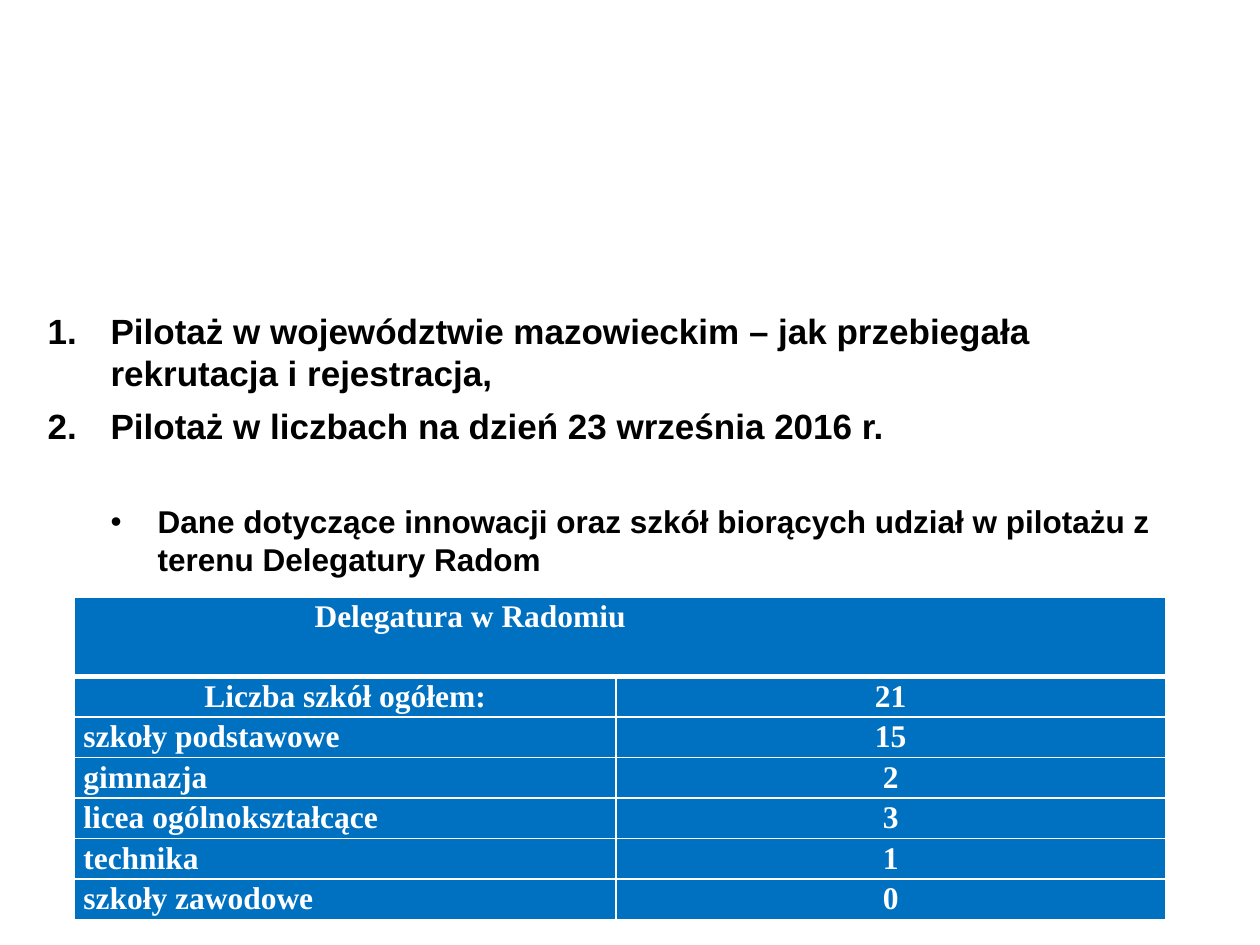
from lxml.etree import SubElement
from pptx import Presentation
from pptx.dml.color import RGBColor
from pptx.enum.text import PP_ALIGN
from pptx.oxml.ns import qn
from pptx.util import Cm, Pt

# Content
TOPICS = [
    "Pilotaż w województwie mazowieckim – jak przebiegała rekrutacja i rejestracja,",
    "Pilotaż w liczbach na dzień 23 września 2016 r.",
]
DETAIL = "Dane dotyczące innowacji oraz szkół biorących udział w pilotażu z terenu Delegatury Radom"
TABLE_TITLE = "Delegatura w Radomiu"
SCHOOLS = [
    ("Liczba szkół ogółem:", "21"),
    ("szkoły podstawowe", "15"),
    ("gimnazja", "2"),
    ("licea ogólnokształcące", "3"),
    ("technika", "1"),
    ("szkoły zawodowe", "0"),
]
BLACK, WHITE, BLUE = "000000", "FFFFFF", "0070C0"
COLUMN_WIDTHS = (Cm(10.92), Cm(11.07))
TITLE_HEIGHT, ROW_HEIGHT = Cm(1.6), Cm(0.81)


def color(value):
    return RGBColor.from_string(value)


def add_text(paragraph, text, font_name, size, text_color):
    run = paragraph.add_run()
    run.text = text
    run.font.name = font_name
    run.font.size = Pt(size)
    run.font.bold = True
    run.font.color.rgb = color(text_color)


def set_bullet(paragraph, left, hanging, tag, **attributes):
    properties = paragraph._p.get_or_add_pPr()
    properties.set("marL", str(left))
    properties.set("indent", str(-hanging))
    SubElement(properties, qn("a:buFont"), typeface="Arial")
    SubElement(properties, qn(tag), **attributes)


def set_borders(cell, bottom_width):
    properties = cell._tc.get_or_add_tcPr()
    widths = {"a:lnL": 1, "a:lnR": 1, "a:lnT": 1, "a:lnB": bottom_width}
    for position, (tag, width) in enumerate(widths.items()):
        line = properties.makeelement(qn(tag), {"w": str(Pt(width))})
        properties.insert(position, line)
        fill = SubElement(line, qn("a:solidFill"))
        SubElement(fill, qn("a:srgbClr"), val=WHITE)


def fill_cell(cell, text, alignment, bottom_width=1):
    cell.margin_left = cell.margin_right = Cm(0.18)
    cell.margin_top = cell.margin_bottom = 0
    cell.fill.solid()
    cell.fill.fore_color.rgb = color(BLUE)
    set_borders(cell, bottom_width)
    paragraph = cell.text_frame.paragraphs[0]
    paragraph.alignment = alignment
    paragraph.line_spacing = 1.07
    add_text(paragraph, text, "Times New Roman", 18, WHITE)
    return paragraph


presentation = Presentation()
presentation.slide_width, presentation.slide_height = Cm(25.4), Cm(19.05)
slide = presentation.slides.add_slide(presentation.slide_layouts[6])

# Numbered topics and the bullet under them
text_frame = slide.shapes.add_textbox(Cm(0.71), Cm(6.12), Cm(23.19), Cm(9.07)).text_frame
text_frame.word_wrap = True
for index, topic in enumerate(TOPICS):
    paragraph = text_frame.add_paragraph() if index else text_frame.paragraphs[0]
    paragraph.space_after = Pt(6)
    set_bullet(paragraph, Cm(1.27), Cm(1.27), "a:buAutoNum", type="arabicPeriod")
    add_text(paragraph, topic, "Arial", 20, BLACK)
paragraph = text_frame.add_paragraph()
paragraph.level = 1
paragraph.space_before = Pt(26)
set_bullet(paragraph, Cm(2.22), Cm(0.95), "a:buChar", char="•")
add_text(paragraph, DETAIL, "Arial", 18, BLACK)

# Table of schools
table = slide.shapes.add_table(
    len(SCHOOLS) + 1, 2, Cm(1.5), Cm(12.04), sum(COLUMN_WIDTHS),
    TITLE_HEIGHT + ROW_HEIGHT * len(SCHOOLS)).table
for column, width in zip(table.columns, COLUMN_WIDTHS):
    column.width = width
for index, row in enumerate(table.rows):
    row.height = ROW_HEIGHT if index else TITLE_HEIGHT

# Title row, centred on a tab stop
table.cell(0, 0).merge(table.cell(0, 1))
title = fill_cell(table.cell(0, 0), "\t" + TABLE_TITLE, PP_ALIGN.LEFT, 3)
tab_list = SubElement(title._p.get_or_add_pPr(), qn("a:tabLst"))
SubElement(tab_list, qn("a:tab"), pos=str(Cm(7.8)), algn="ctr")

for index, (label, count) in enumerate(SCHOOLS, start=1):
    label_alignment = PP_ALIGN.CENTER if index == 1 else PP_ALIGN.LEFT
    fill_cell(table.cell(index, 0), label, label_alignment)
    fill_cell(table.cell(index, 1), count, PP_ALIGN.CENTER)

presentation.save("out.pptx")
